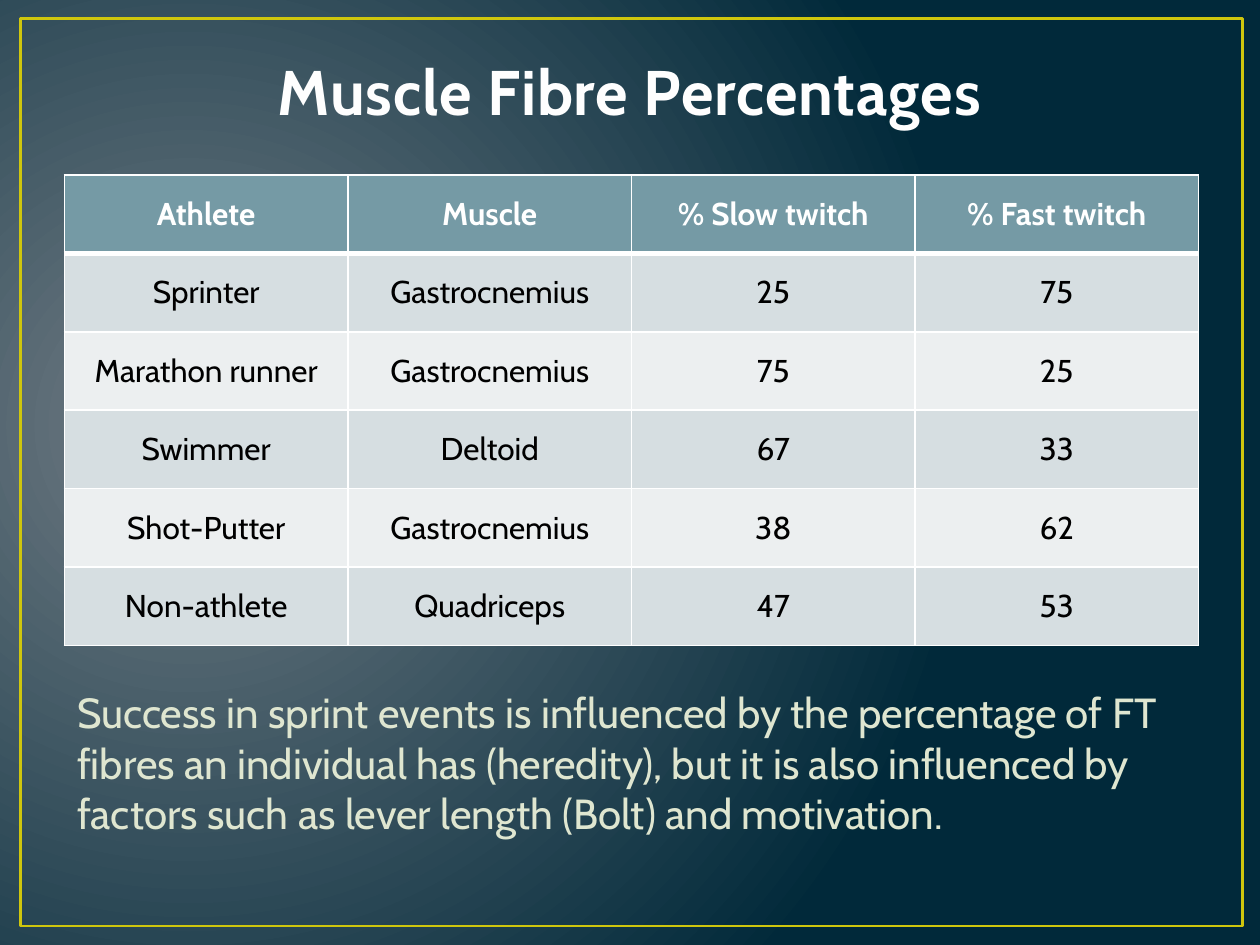
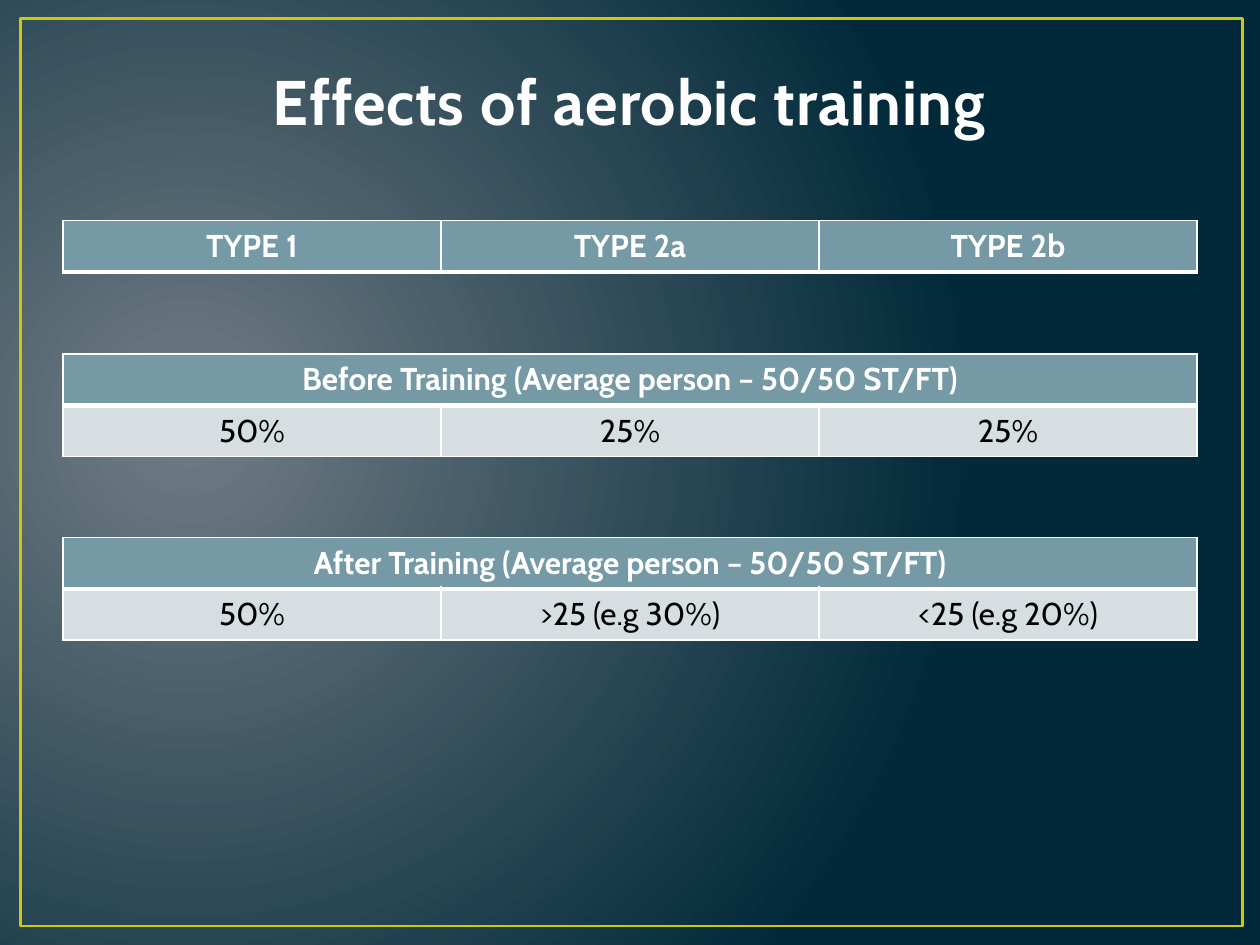
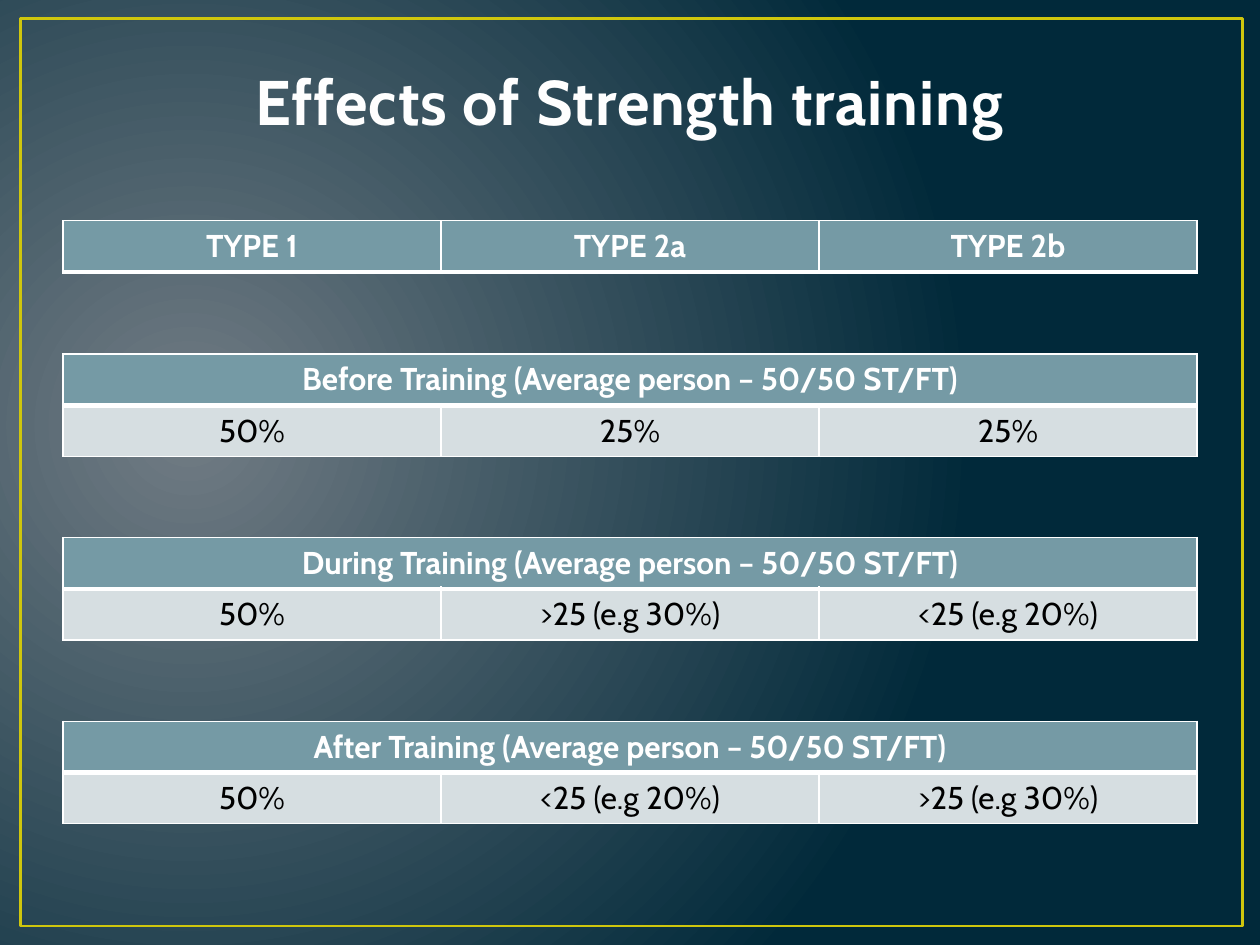
"""Builds three slides on muscle fibre percentages and the effects of training."""
import pptx
import pptx.dml.color
import pptx.enum.shapes
import pptx.enum.text
import pptx.oxml
import pptx.oxml.ns
import pptx.util
from pptx.dml.color import RGBColor
from pptx.util import Cm, Pt

FONT = "Cabin"
GLOW = RGBColor(0x71, 0x7C, 0x84)
NAVY = RGBColor(0x01, 0x29, 0x3A)
YELLOW = RGBColor(0xCF, 0xC6, 0x0D)
TITLE_WHITE = RGBColor(0xFE, 0xFE, 0xFE)
BODY_GREEN = RGBColor(0xDF, 0xE6, 0xD0)
WHITE = RGBColor(0xFF, 0xFF, 0xFF)
BLACK = RGBColor(0x00, 0x00, 0x00)
TEAL = RGBColor(0x75, 0x9A, 0xA5)
BANDS = (RGBColor(0xD6, 0xDE, 0xE1), RGBColor(0xEC, 0xEF, 0xF0))

FIBRE_TITLE = "Muscle Fibre Percentages"
FIBRE_ROWS = [
    ("Athlete", "Muscle", "% Slow twitch", "% Fast twitch"),
    ("Sprinter", "Gastrocnemius", "25", "75"),
    ("Marathon runner", "Gastrocnemius", "75", "25"),
    ("Swimmer", "Deltoid", "67", "33"),
    ("Shot-Putter", "Gastrocnemius", "38", "62"),
    ("Non-athlete", "Quadriceps", "47", "53"),
]
FIBRE_NOTE = (
    "Success in sprint events is influenced by the percentage of FT fibres an "
    "individual has (heredity), but it is also influenced by factors such as "
    "lever length (Bolt) and motivation."
)
FIBRE_TYPES = ("TYPE 1", "TYPE 2a", "TYPE 2b")
STAGE_HEADING = "{} Training (Average person – 50/50 ST/FT)"
EVEN = ("50%", "25%", "25%")
MORE_2A = ("50%", ">25 (e.g 30%)", "<25 (e.g 20%)")
MORE_2B = ("50%", "<25 (e.g 20%)", ">25 (e.g 30%)")
EFFECTS = [
    ("Effects of aerobic training", [("Before", EVEN), ("After", MORE_2A)]),
    ("Effects of Strength training",
     [("Before", EVEN), ("During", MORE_2A), ("After", MORE_2B)]),
]

LEFT, WIDTH = Cm(1.27), Cm(22.86)
TITLE_TOP = Cm(0.76)
TYPES_TOP, STAGES_TOP, STAGE_PITCH = Cm(4.45), Cm(7.14), Cm(3.7)
LOW_ROW, TALL_ROW = Cm(1.03), Cm(1.58)
THIN, THICK = Pt(1), Pt(3)


def style_runs(para, size, color, bold=False):
    for span in para.runs:
        span.font.name = FONT
        span.font.size = Pt(size)
        span.font.bold = bold
        span.font.color.rgb = color


def place(box, left, top, width, height):
    box.left, box.top, box.width, box.height = left, top, width, height


def style_master(master, frame):
    fill = master.background.fill
    fill.gradient()
    for stop, color in zip(fill.gradient_stops, (GLOW, NAVY)):
        stop.color.rgb = color
    gradient = master.element.find(".//" + pptx.oxml.ns.qn("a:gradFill"))
    gradient.remove(gradient.find(pptx.oxml.ns.qn("a:lin")))
    gradient.append(pptx.oxml.parse_xml(
        f'<a:path {pptx.oxml.ns.nsdecls("a")} path="circle">'
        '<a:fillToRect l="15000" t="50000" r="85000" b="60000"/></a:path>'))
    frame.shadow.inherit = False
    frame.fill.background()
    frame.line.color.rgb = YELLOW
    frame.line.width = Pt(1.5)
    frame.element.nvSpPr.cNvPr.id = 20
    master.element.cSld.spTree.append(frame.element)


def add_page(deck, layout, title, title_height):
    page = deck.slides.add_slide(deck.slide_layouts.get_by_name(layout))
    box = page.shapes.title
    place(box, LEFT, TITLE_TOP, WIDTH, title_height)
    box.text_frame.text = title
    box.text_frame.vertical_anchor = pptx.enum.text.MSO_ANCHOR.BOTTOM
    box.text_frame.auto_size = pptx.enum.text.MSO_AUTO_SIZE.NONE
    para = box.text_frame.paragraphs[0]
    para.alignment = pptx.enum.text.PP_ALIGN.CENTER
    style_runs(para, 36, TITLE_WHITE, bold=True)
    for span in para.runs:
        span.font._element.set("spc", "50")
    return page


def set_borders(cell, top, bottom):
    properties = cell._tc.get_or_add_tcPr()
    sides = (("L", THIN), ("R", THIN), ("T", top), ("B", bottom))
    for place_in_order, (side, width) in enumerate(sides):
        properties.insert(place_in_order, pptx.oxml.parse_xml(
            f'<a:ln{side} {pptx.oxml.ns.nsdecls("a")} w="{width}"><a:solidFill>'
            f'<a:srgbClr val="{WHITE}"/></a:solidFill></a:ln{side}>'))


def add_grid(page, rows, left, top, row_height, anchor):
    columns = len(rows[-1])
    table = page.shapes.add_table(
        len(rows), columns, left, top, WIDTH, row_height * len(rows)).table
    for r, row in enumerate(rows):
        table.rows[r].height = row_height
        for c in range(columns):
            cell = table.cell(r, c)
            cell.fill.solid()
            cell.fill.fore_color.rgb = BANDS[(r - 1) % 2] if r else TEAL
            set_borders(cell, THICK if r == 1 else THIN, THIN if r else THICK)
        if len(row) < columns:
            table.cell(r, 0).merge(table.cell(r, columns - 1))
        for c, text in enumerate(row):
            cell = table.cell(r, c)
            cell.vertical_anchor = anchor
            cell.text_frame.text = text
            para = cell.text_frame.paragraphs[0]
            para.alignment = pptx.enum.text.PP_ALIGN.CENTER
            style_runs(para, 18, BLACK if r else WHITE, bold=not r)


def add_note(page):
    box = page.placeholders[1]
    place(box, Cm(1.3), Cm(13.72), WIDTH, Cm(4.29))
    box.text_frame.text = FIBRE_NOTE
    box.text_frame.auto_size = pptx.enum.text.MSO_AUTO_SIZE.NONE
    para = box.text_frame.paragraphs[0]
    properties = para._p.get_or_add_pPr()
    properties.set("marL", "0")
    properties.set("indent", "0")
    properties.append(pptx.oxml.parse_xml(
        f'<a:buNone {pptx.oxml.ns.nsdecls("a")}/>'))
    style_runs(para, 24, BODY_GREEN)


def main():
    deck = pptx.Presentation()
    deck.slide_width, deck.slide_height = Cm(25.4), Cm(19.05)
    anchors = pptx.enum.text.MSO_ANCHOR

    page = add_page(deck, "Title and Content", FIBRE_TITLE, Cm(1.96))
    frame = page.shapes.add_shape(
        pptx.enum.shapes.MSO_SHAPE.RECTANGLE,
        Cm(0.41), Cm(0.38), Cm(24.64), Cm(18.29))
    style_master(deck.slide_master, frame)
    add_note(page)
    add_grid(page, FIBRE_ROWS, Cm(1.3), Cm(3.53), TALL_ROW, anchors.MIDDLE)

    for title, stages in EFFECTS:
        page = add_page(deck, "Title Only", title, Cm(2.16))
        add_grid(page, [FIBRE_TYPES], LEFT, TYPES_TOP, LOW_ROW, anchors.TOP)
        for i, (stage, shares) in enumerate(stages):
            rows = [(STAGE_HEADING.format(stage),), shares]
            add_grid(page, rows, LEFT, STAGES_TOP + i * STAGE_PITCH,
                     LOW_ROW, anchors.TOP)

    deck.save("out.pptx")


if __name__ == "__main__":
    main()
